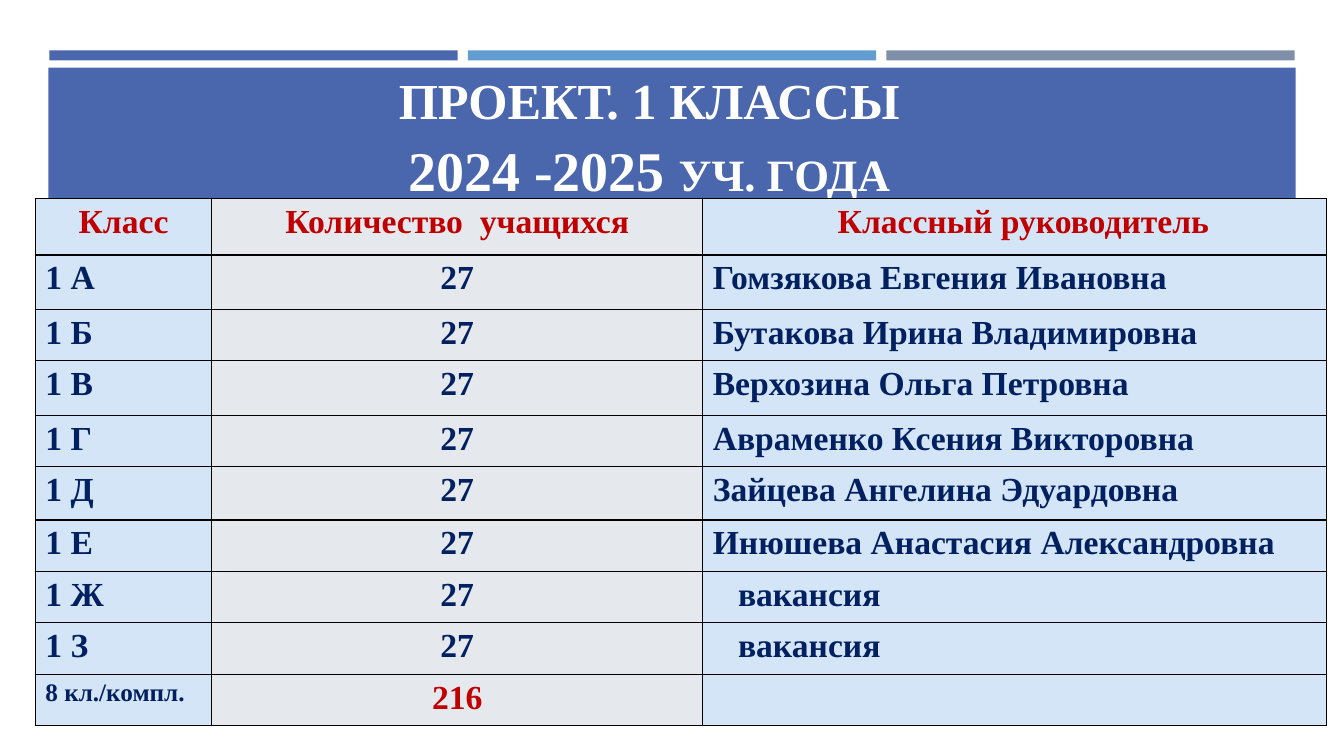
from dataclasses import dataclass

import lxml.etree
import pptx
import pptx.dml.color
import pptx.enum.shapes
import pptx.enum.text
import pptx.oxml.ns
import pptx.util
from pptx.util import Inches

ALIGN = pptx.enum.text.PP_ALIGN


@dataclass(frozen=True)
class Theme:
    font: str = "Times New Roman"
    indigo: str = "4A66AC"
    sky: str = "629DD1"
    slate: str = "7F8FA9"
    white: str = "FFFFFF"
    navy: str = "002060"
    red: str = "C00000"
    border: str = "000000"
    column_fills: tuple = ("D4E5F7", "E5E9EE", "D4E5F7")
    title: int = 36
    year: int = 40
    year_suffix: int = 32
    body: int = 24
    small: int = 18


THEME = Theme()

HEADINGS = ("Класс", "Количество  учащихся", "Классный руководитель")
VACANCY = "вакансия"
PUPILS_PER_CLASS = 27
TEACHERS = {
    "1 А": "Гомзякова Евгения Ивановна",
    "1 Б": "Бутакова Ирина Владимировна",
    "1 В": "Верхозина Ольга Петровна",
    "1 Г": "Авраменко Ксения Викторовна",
    "1 Д": "Зайцева Ангелина Эдуардовна",
    "1 Е": "Инюшева Анастасия Александровна",
    "1 Ж": VACANCY,
    "1 З": VACANCY,
}
COLUMN_WIDTHS = (1.75, 4.87, 6.19)
ROW_HEIGHTS = (0.56, 0.54, 0.51, 0.54, 0.51, 0.53, 0.51, 0.51, 0.51, 0.51)


def rgb(color):
    return pptx.dml.color.RGBColor.from_string(color)


def style_font(font, size, color):
    font.name = THEME.font
    font.size = pptx.util.Pt(size)
    font.bold = True
    font.color.rgb = rgb(color)


def set_indent(paragraph, side, inches):
    paragraph._p.get_or_add_pPr().set(side, str(Inches(inches)))


def add_band(slide, left, top, width, height, color):
    band = slide.shapes.add_shape(
        pptx.enum.shapes.MSO_SHAPE.RECTANGLE,
        Inches(left), Inches(top), Inches(width), Inches(height))
    band.shadow.inherit = False
    band.fill.solid()
    band.fill.fore_color.rgb = rgb(color)
    band.line.fill.background()


def fill_title(slide):
    title = slide.shapes.title
    title.left, title.top = Inches(0.43), Inches(0.59)
    title.width, title.height = Inches(12.27), Inches(1.47)
    # Bring the heading in front of the bands
    title.element.getparent().append(title.element)

    frame = title.text_frame
    frame.word_wrap = True
    frame.auto_size = pptx.enum.text.MSO_AUTO_SIZE.NONE
    frame.vertical_anchor = pptx.enum.text.MSO_ANCHOR.BOTTOM

    project = frame.paragraphs[0]
    project.text = "ПРОЕКТ. 1 КЛАССЫ"
    set_indent(project, "marR", 0.25)
    style_font(project.font, THEME.title, THEME.white)

    school_year = frame.add_paragraph()
    school_year.space_before = pptx.util.Pt(4)
    for text, size in (("2024 -2025 ", THEME.year),
                       ("УЧ. ГОДА", THEME.year_suffix)):
        run = school_year.add_run()
        run.text = text
        style_font(run.font, size, THEME.white)

    for line in frame.paragraphs:
        line.alignment = ALIGN.CENTER


def add_borders(cell):
    properties = cell._tc.get_or_add_tcPr()
    qn = pptx.oxml.ns.qn
    for position, side in enumerate(("a:lnL", "a:lnR", "a:lnT", "a:lnB")):
        edge = lxml.etree.Element(qn(side), w=str(pptx.util.Pt(1)))
        paint = lxml.etree.SubElement(edge, qn("a:solidFill"))
        lxml.etree.SubElement(paint, qn("a:srgbClr"), val=THEME.border)
        properties.insert(position, edge)


def write_cell(cell, text, size, color, alignment, indent=0):
    paragraph = cell.text_frame.paragraphs[0]
    paragraph.text = text
    paragraph.alignment = alignment
    if indent:
        set_indent(paragraph, "marL", indent)
    style_font(paragraph.font, size, color)


def add_class_table(slide):
    table = slide.shapes.add_table(
        len(ROW_HEIGHTS), len(COLUMN_WIDTHS), Inches(0.35), Inches(1.97),
        Inches(sum(COLUMN_WIDTHS)), Inches(sum(ROW_HEIGHTS))).table
    table.first_row = table.horz_banding = False
    for column, width in zip(table.columns, COLUMN_WIDTHS):
        column.width = Inches(width)
    for row, height in zip(table.rows, ROW_HEIGHTS):
        row.height = Inches(height)
        for cell, fill in zip(row.cells, THEME.column_fills):
            cell.fill.solid()
            cell.fill.fore_color.rgb = rgb(fill)
            add_borders(cell)

    # Heading row
    for column, heading in enumerate(HEADINGS):
        write_cell(table.cell(0, column), heading, THEME.body, THEME.red,
                   ALIGN.CENTER, 0.17 if column == 2 else 0)

    # One row per class
    for row, (name, teacher) in enumerate(TEACHERS.items(), start=1):
        write_cell(table.cell(row, 0), name, THEME.body, THEME.navy, ALIGN.LEFT)
        write_cell(table.cell(row, 1), str(PUPILS_PER_CLASS), THEME.body,
                   THEME.navy, ALIGN.CENTER)
        write_cell(table.cell(row, 2), teacher, THEME.body, THEME.navy,
                   ALIGN.LEFT, 0.25 if teacher == VACANCY else 0)

    # Totals
    total_row = len(TEACHERS) + 1
    write_cell(table.cell(total_row, 0), f"{len(TEACHERS)} кл./компл.",
               THEME.small, THEME.navy, ALIGN.LEFT)
    write_cell(table.cell(total_row, 1), str(PUPILS_PER_CLASS * len(TEACHERS)),
               THEME.body, THEME.red, ALIGN.CENTER)


def main():
    deck = pptx.Presentation()
    deck.slide_width, deck.slide_height = Inches(13.33), Inches(7.5)
    slide = deck.slides.add_slide(deck.slide_layouts[5])

    # Stripes and heading band
    for index, color in enumerate((THEME.indigo, THEME.sky, THEME.slate)):
        add_band(slide, 0.49 + index * 4.15, 0.5, 4.05, 0.1, color)
    add_band(slide, 0.48, 0.67, 12.37, 1.3, THEME.indigo)

    fill_title(slide)
    add_class_table(slide)
    deck.save("out.pptx")


if __name__ == "__main__":
    main()
